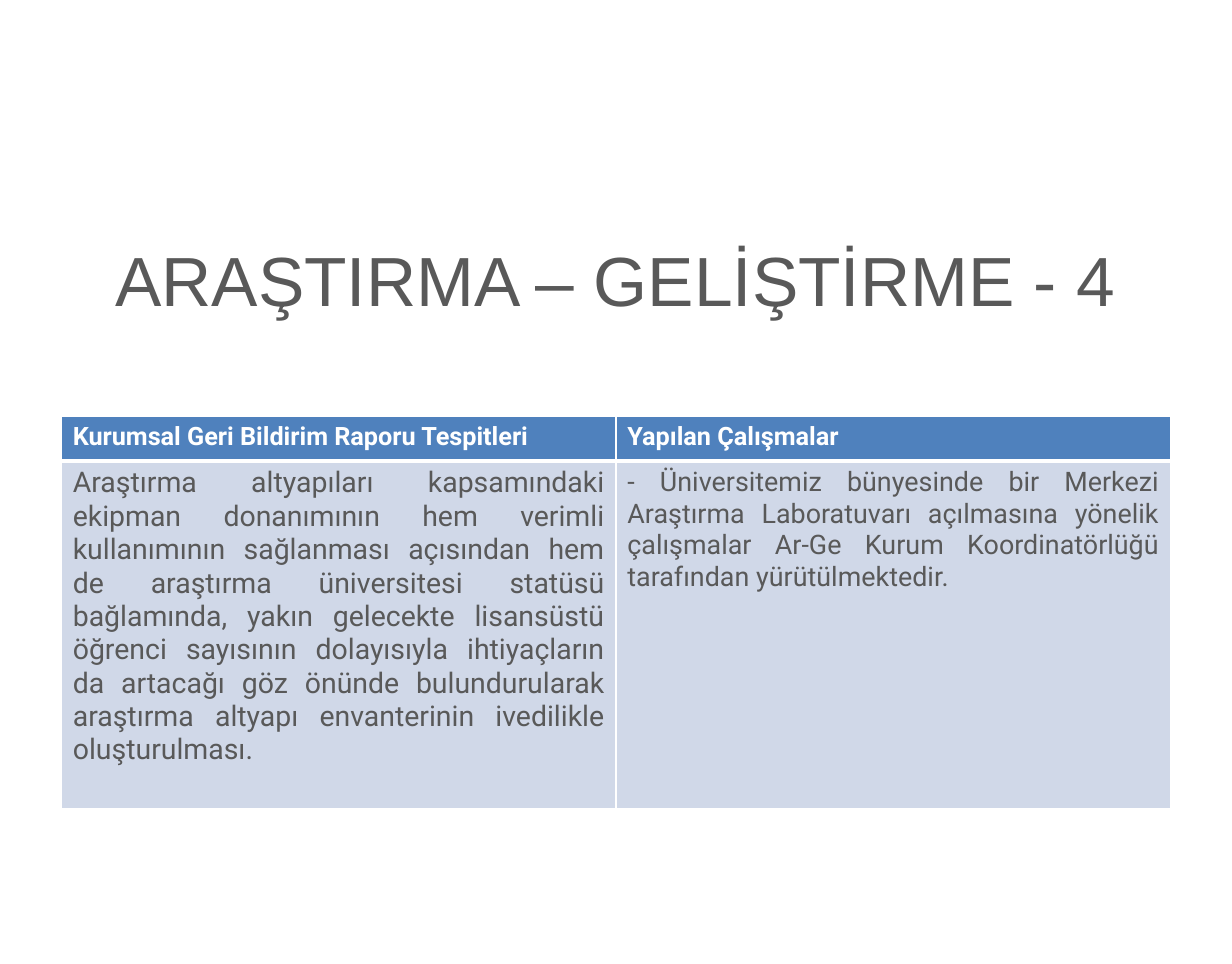
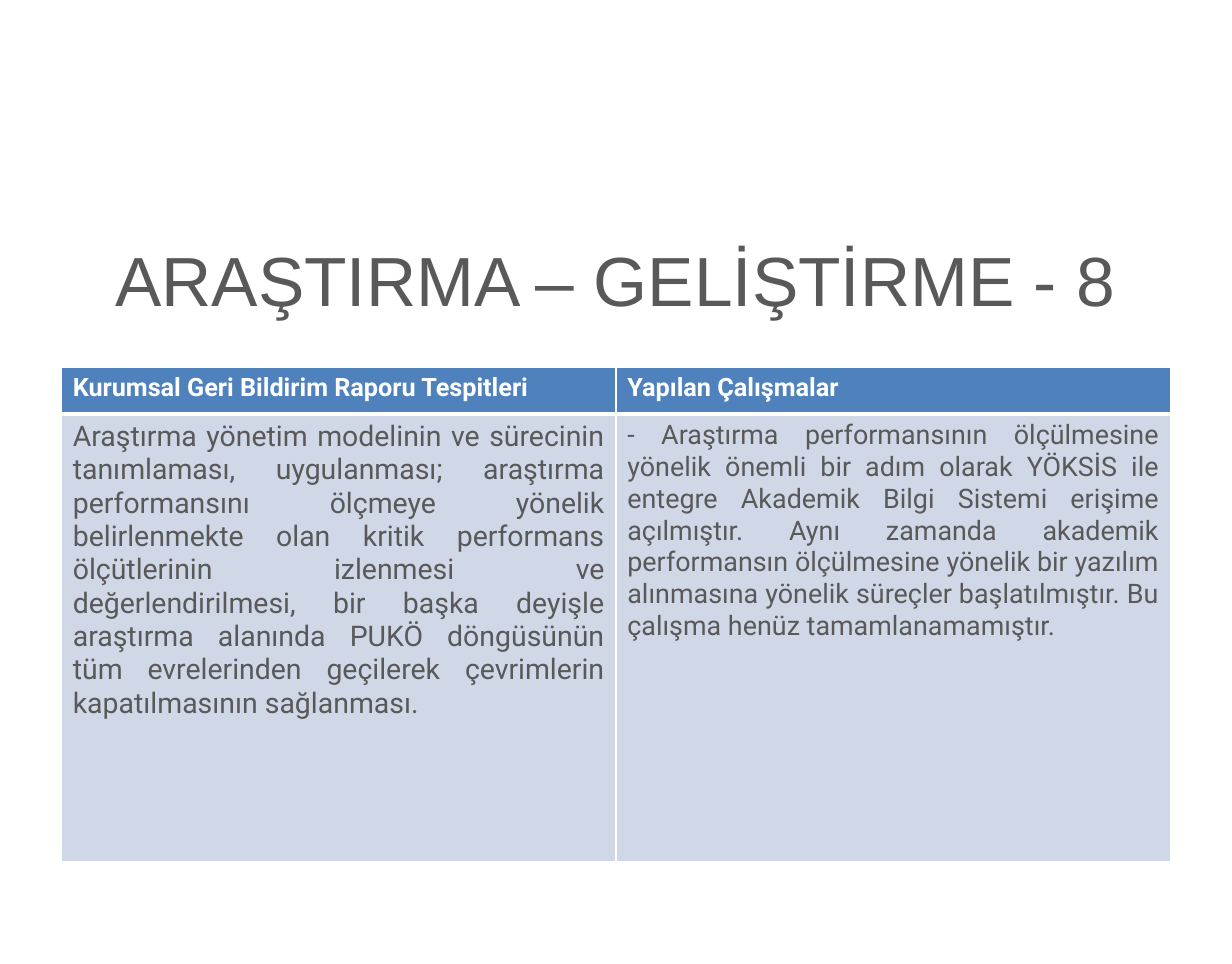
from lxml import etree
from pptx import Presentation
from pptx.dml.color import RGBColor
from pptx.enum.text import MSO_ANCHOR as Anchor, PP_ALIGN as Align
from pptx.oxml.ns import qn
from pptx.util import Inches, Pt

WHITE = RGBColor(0xFF, 0xFF, 0xFF)
GREY = RGBColor(0x59, 0x59, 0x59)
BLUE = RGBColor(0x4F, 0x81, 0xBD)
PALE = RGBColor(0xD0, 0xD8, 0xE8)

LEFT, WIDTH = 0.54, 9.75
TITLE = (LEFT, 2.03, WIDTH, 1.41)
HEADS = ("Kurumsal Geri Bildirim Raporu Tespitleri", "Yapılan Çalışmalar")
SIZES = (18, 17)  # finding, work done

# number, table top, row heights, finding, work done
TOPICS = (
    (4, 3.66, (0.39, 3.06),
     "Araştırma altyapıları kapsamındaki ekipman donanımının hem verimli "
     "kullanımının sağlanması açısından hem de araştırma üniversitesi statüsü "
     "bağlamında, yakın gelecekte lisansüstü öğrenci sayısının dolayısıyla "
     "ihtiyaçların da artacağı göz önünde bulundurularak araştırma altyapı "
     "envanterinin ivedilikle oluşturulması.",
     "- Üniversitemiz bünyesinde bir Merkezi Araştırma Laboratuvarı açılmasına "
     "yönelik çalışmalar Ar-Ge Kurum Koordinatörlüğü tarafından "
     "yürütülmektedir."),
    (8, 3.23, (0.41, 3.93),
     "Araştırma yönetim modelinin ve sürecinin tanımlaması, uygulanması; "
     "araştırma performansını ölçmeye yönelik belirlenmekte olan kritik "
     "performans ölçütlerinin izlenmesi ve değerlendirilmesi, bir başka deyişle "
     "araştırma alanında PUKÖ döngüsünün tüm evrelerinden geçilerek çevrimlerin "
     "kapatılmasının sağlanması.",
     "- Araştırma performansının ölçülmesine yönelik önemli bir adım olarak "
     "YÖKSİS ile entegre Akademik Bilgi Sistemi erişime açılmıştır. Aynı zamanda "
     "akademik performansın ölçülmesine yönelik bir yazılım alınmasına yönelik "
     "süreçler başlatılmıştır. Bu çalışma henüz tamamlanamamıştır."),
)


def write(frame, text, face, size, color, align, bold=False):
    para = frame.paragraphs[0]
    para.alignment = align
    run = para.add_run()
    run.text = text
    font = run.font
    font.name, font.size, font.bold = face, Pt(size), bold
    font.color.rgb = color


def edge(cell, top, bottom):
    """Draw white cell borders; top and bottom are widths in points."""
    props = cell._tc.get_or_add_tcPr()
    sides = (("L", 1), ("R", 1), ("T", top), ("B", bottom))
    for spot, (side, width) in enumerate(sides):
        line = etree.Element(qn(f"a:ln{side}"), w=str(Pt(width)))
        fill = etree.SubElement(line, qn("a:solidFill"))
        etree.SubElement(fill, qn("a:srgbClr"), val=str(WHITE))
        props.insert(spot, line)


def add_title(slide, box, text):
    title = slide.shapes.title
    title.left, title.top, title.width, title.height = map(Inches, box)
    frame = title.text_frame
    frame.word_wrap = True
    frame.vertical_anchor = Anchor.TOP
    write(frame, text, "Arial", 44, GREY, Align.CENTER)


def add_grid(slide, box, heights, texts):
    table = slide.shapes.add_table(2, 2, *map(Inches, box)).table
    for row, height in zip(table.rows, heights):
        row.height = Inches(height)
    for col in range(2):
        head, body = table.cell(0, col), table.cell(1, col)
        for cell, color in ((head, BLUE), (body, PALE)):
            cell.fill.solid()
            cell.fill.fore_color.rgb = color
        edge(head, 1, 3)
        edge(body, 3, 1)
        write(head.text_frame, HEADS[col], "Roboto", 16, WHITE, Align.LEFT, True)
        write(body.text_frame, texts[col], "Roboto", SIZES[col], GREY,
              Align.JUSTIFY)


def add_topic(deck, number, top, heights, *texts):
    slide = deck.slides.add_slide(deck.slide_layouts[5])
    add_title(slide, TITLE, f"ARAŞTIRMA – GELİŞTİRME - {number}")
    add_grid(slide, (LEFT, top, WIDTH, sum(heights)), heights, texts)


def main():
    deck = Presentation()
    deck.slide_width, deck.slide_height = Inches(10.83), Inches(8.47)
    for topic in TOPICS:
        add_topic(deck, *topic)
    deck.save("out.pptx")


if __name__ == "__main__":
    main()
